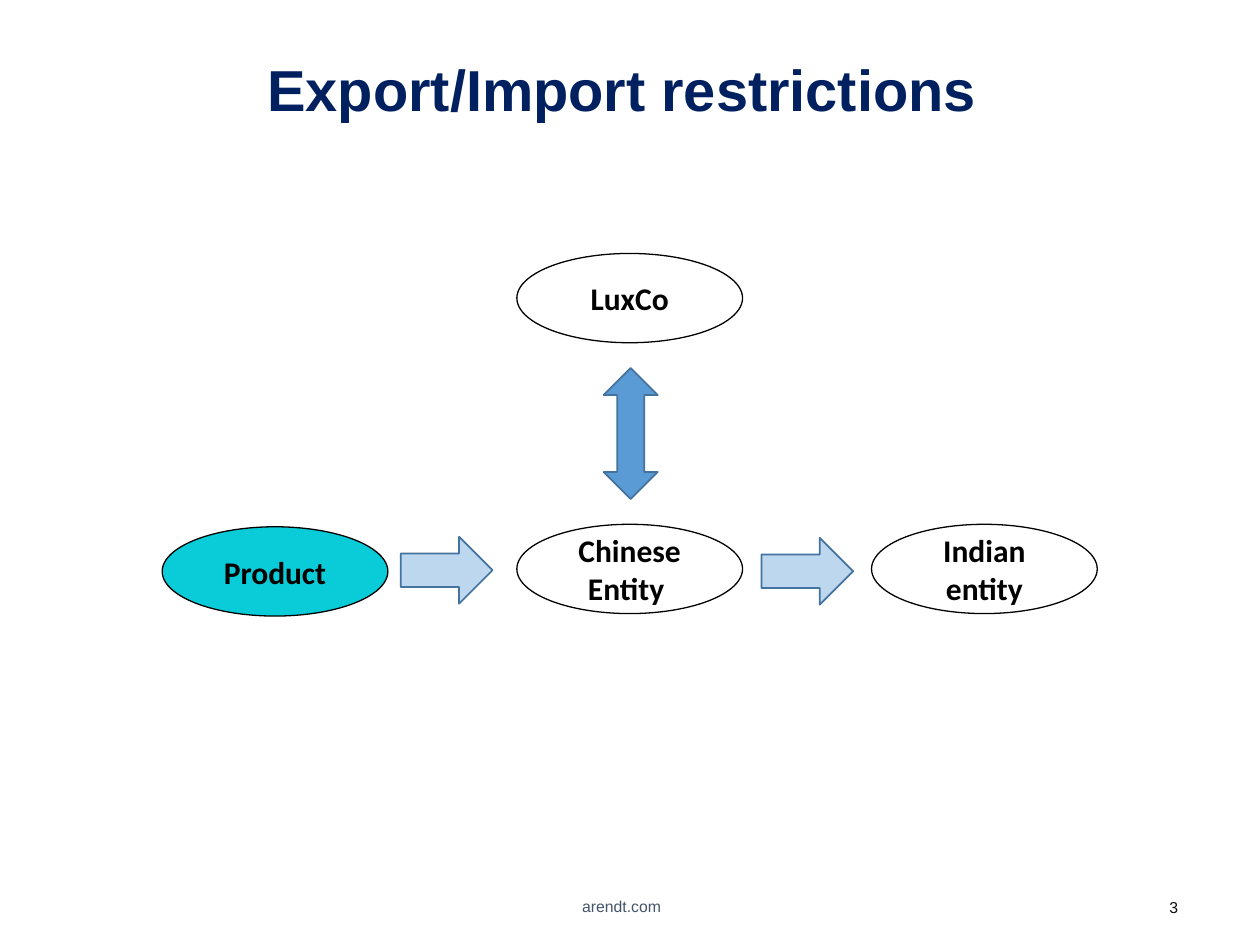
from dataclasses import dataclass

import pptx
import pptx.dml.color
import pptx.enum.shapes
import pptx.enum.text
import pptx.util

Cm, Pt = pptx.util.Cm, pptx.util.Pt
SHAPE = pptx.enum.shapes.MSO_SHAPE
ANCHOR = pptx.enum.text.MSO_ANCHOR
ALIGN = pptx.enum.text.PP_ALIGN

COLORS = {
    "navy": "002060", "black": "000000", "number": "0C0C0C", "footer": "44546A",
    "product": "09CCD8", "flow": "BDD7EE", "link": "5B9BD5", "arrow_line": "43739E",
}
ENTITY_FONT = {"name": "Calibri", "size": Pt(18), "bold": True}
TITLE_FONT = {"name": "Arial", "size": Pt(33), "bold": True}
FOOTER_FONT = {"name": "Arial", "size": Pt(9), "bold": False}

# Entity grid in centimetres
ENTITY_SIZE = (4.55, 1.8)
COLUMNS = [3.27 + 7.15 * column for column in range(3)]
PARENT_ROW, TRADE_ROW = 5.11, 10.57


@dataclass
class Entity:
    text: str
    left: float
    top: float
    fill: str | None = None


@dataclass
class Arrow:
    kind: pptx.enum.shapes.MSO_SHAPE
    box: tuple[float, float, float, float]
    fill: str
    rotation: int = 0


@dataclass
class Label:
    text: str
    box: tuple[float, float, float, float]
    font: dict
    color: str
    align: pptx.enum.text.PP_ALIGN = ALIGN.CENTER
    anchor: pptx.enum.text.MSO_ANCHOR = ANCHOR.MIDDLE
    line_spacing: float = 1.0


ENTITIES = [
    Entity("LuxCo", COLUMNS[1], PARENT_ROW),
    Entity("Product", COLUMNS[0], 10.62, "product"),
    Entity("Chinese Entity ", COLUMNS[1], TRADE_ROW),
    Entity("Indian entity", COLUMNS[2], TRADE_ROW),
]
ARROWS = [
    Arrow(SHAPE.DOWN_ARROW, (8.33, 10.57, 1.35, 1.85), "flow", 270),
    Arrow(SHAPE.DOWN_ARROW, (15.6, 10.59, 1.35, 1.85), "flow", 270),
    Arrow(SHAPE.UP_DOWN_ARROW, (12.17, 7.42, 1.09, 2.64), "link"),
]
LABELS = [
    Label("Export/Import restrictions ", (4.04, 0.48, 17.32, 2.79), TITLE_FONT, "navy",
          line_spacing=0.9),
    Label("arendt.com", (10.41, 17.83, 4.24, 0.86), FOOTER_FONT, "footer"),
    Label("3", (22.81, 17.98, 1.19, 0.74), FOOTER_FONT, "number",
          ALIGN.RIGHT, ANCHOR.TOP),
]


def rgb(name: str) -> pptx.dml.color.RGBColor:
    return pptx.dml.color.RGBColor.from_string(COLORS[name])


def write(shape, label: Label) -> None:
    frame = shape.text_frame
    frame.word_wrap = True
    frame.vertical_anchor = label.anchor
    paragraph = frame.paragraphs[0]
    paragraph.alignment = label.align
    paragraph.line_spacing = label.line_spacing
    run = paragraph.add_run()
    run.text = label.text
    for attribute, value in label.font.items():
        setattr(run.font, attribute, value)
    run.font.color.rgb = rgb(label.color)


def draw_shape(slide, kind, box, fill: str | None, line: str, width: float):
    shape = slide.shapes.add_shape(kind, *map(Cm, box))
    shape.shadow.inherit = False
    if fill:
        shape.fill.solid()
        shape.fill.fore_color.rgb = rgb(fill)
    else:
        shape.fill.background()
    shape.line.color.rgb = rgb(line)
    shape.line.width = Pt(width)
    return shape


def draw_entity(slide, entity: Entity) -> None:
    box = (entity.left, entity.top, *ENTITY_SIZE)
    ellipse = draw_shape(slide, SHAPE.OVAL, box, entity.fill, "black", 0.75)
    write(ellipse, Label(entity.text, box, ENTITY_FONT, "black"))


def draw_arrow(slide, arrow: Arrow) -> None:
    shape = draw_shape(slide, arrow.kind, arrow.box, arrow.fill, "arrow_line", 1)
    shape.rotation = arrow.rotation


def draw_label(slide, label: Label) -> None:
    write(slide.shapes.add_textbox(*map(Cm, label.box)), label)


def main() -> None:
    deck = pptx.Presentation()
    deck.slide_width, deck.slide_height = Cm(25.4), Cm(19.05)
    slide = deck.slides.add_slide(deck.slide_layouts[6])

    # Title, footer and slide number
    for label in LABELS:
        draw_label(slide, label)
    # Companies and the traded product
    for entity in ENTITIES:
        draw_entity(slide, entity)
    # Flow of goods and ownership link
    for arrow in ARROWS:
        draw_arrow(slide, arrow)

    deck.save("out.pptx")


if __name__ == "__main__":
    main()
